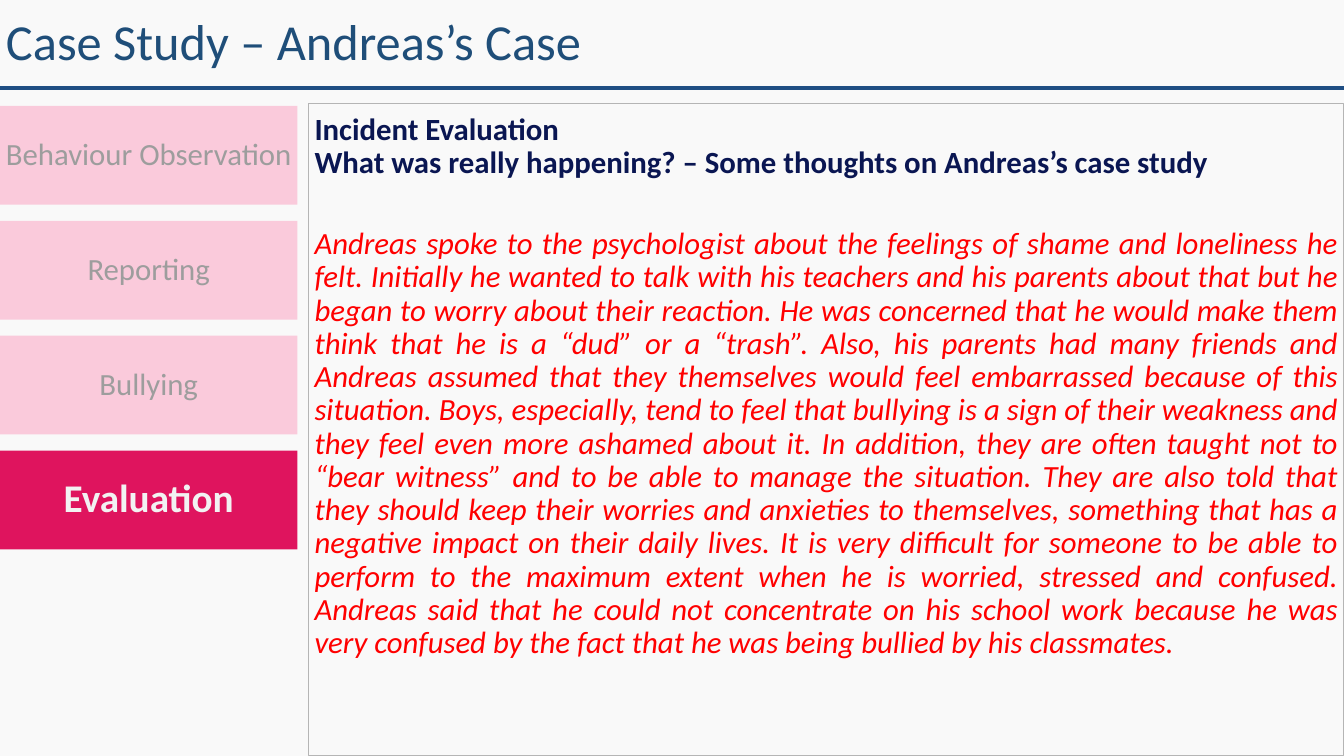
"""Build the case study slide with its stage column and evaluation text."""
from dataclasses import dataclass

from lxml import etree
from pptx import Presentation
from pptx.dml.color import RGBColor
from pptx.enum.shapes import MSO_CONNECTOR, MSO_SHAPE
from pptx.enum.text import MSO_ANCHOR, PP_ALIGN
from pptx.oxml.ns import qn
from pptx.util import Inches, Pt

RECTANGLE = MSO_SHAPE.RECTANGLE
STRAIGHT = MSO_CONNECTOR.STRAIGHT
TOP, MIDDLE = MSO_ANCHOR.TOP, MSO_ANCHOR.MIDDLE
LEFT, CENTER, JUSTIFY = PP_ALIGN.LEFT, PP_ALIGN.CENTER, PP_ALIGN.JUSTIFY


@dataclass(frozen=True)
class Theme:
    """Colours, typeface and type sizes of the slide."""
    font: str = "Calibri"
    background: str = "F9F9F9"
    rule: str = "1F4E83"
    title: str = "1F4E79"
    stage_fill: str = "FACADB"
    stage_text: str = "9D9D9D"
    active_fill: str = "DF145E"
    active_text: str = "F2F2F2"
    border: str = "B5B5B5"
    heading: str = "0A1652"
    story: str = "FF0000"
    title_size: int = 36
    active_size: int = 28
    body_size: int = 22


THEME = Theme()
WIDTH, HEIGHT = 13.33, 7.5
TITLE_HEIGHT = 0.87
STAGE_TOP, STAGE_WIDTH, STAGE_HEIGHT, STAGE_STEP = 1.05, 2.95, 0.98, 1.14
PANEL_LEFT, PANEL_TOP = 3.06, 1.03

TITLE = "Case Study – Andreas’s Case"
STAGES = ["Behaviour Observation", "Reporting", "Bullying", "Evaluation"]
ACTIVE_STAGE = "Evaluation"
HEADINGS = [
    "Incident Evaluation",
    "What was really happening? – Some thoughts on Andreas’s case study",
]
STORY_SENTENCES = [
    "Andreas spoke to the psychologist about the feelings of shame and loneliness he felt.",
    "Initially he wanted to talk with his teachers and his parents about that but he began "
    "to worry about their reaction.",
    "He was concerned that he would make them think that he is a “dud” or a “trash”.",
    "Also, his parents had many friends and Andreas assumed that they themselves would feel "
    "embarrassed because of this situation.",
    "Boys, especially, tend to feel that bullying is a sign of their weakness and they feel "
    "even more ashamed about it.",
    "In addition, they are often taught not to “bear witness” and to be able to manage the "
    "situation.",
    "They are also told that they should keep their worries and anxieties to themselves, "
    "something that has a negative impact on their daily lives.",
    "It is very difficult for someone to be able to perform to the maximum extent when he is "
    "worried, stressed and confused.",
    "Andreas said that he could not concentrate on his school work because he was very "
    "confused by the fact that he was being bullied by his classmates.",
]


def rgb(code):
    """Turn a hex code into a colour."""
    return RGBColor.from_string(code)


def apply(target, values):
    """Set attributes of an object from a dict."""
    for name, value in values.items():
        setattr(target, name, value)


def set_frame(box, anchor, margin_y=0.06, wrap=True):
    """Set margins, anchor and wrapping of a box's text."""
    apply(box.text_frame, {
        "margin_left": Inches(0.06), "margin_right": Inches(0.06),
        "margin_top": Inches(margin_y), "margin_bottom": Inches(margin_y),
        "vertical_anchor": anchor, "word_wrap": wrap,
    })


def write(para, text, size, color, align=LEFT, before=0, **style):
    """Write one formatted span into a paragraph."""
    apply(para, {"alignment": align, "line_spacing": 0.9, "space_before": Pt(before)})
    span = para.add_run()
    span.text = text
    apply(span.font, {"name": THEME.font, "size": Pt(size), **style})
    span.font.color.rgb = rgb(color)


def add_rectangle(page, left, top, width, height):
    """Add a rectangle without shadow, fill or line."""
    box = page.shapes.add_shape(
        RECTANGLE, Inches(left), Inches(top), Inches(width), Inches(height))
    box.shadow.inherit = False
    box.fill.background()
    box.line.fill.background()
    return box


def add_title(page):
    """Add the slide title and the rule below it."""
    box = page.shapes.add_textbox(0, 0, Inches(WIDTH), Inches(TITLE_HEIGHT))
    set_frame(box, MIDDLE)
    write(box.text_frame.paragraphs[0], TITLE, THEME.title_size, THEME.title)
    y = Inches(TITLE_HEIGHT)
    rule = page.shapes.add_connector(STRAIGHT, 0, y, Inches(WIDTH), y)
    rule.line.color.rgb = rgb(THEME.rule)
    rule.line.width = Pt(3)
    etree.SubElement(rule.element.spPr, qn("a:effectLst"))


def add_stage(page, index, label):
    """Add one stage of the column, highlighted when active."""
    active = label == ACTIVE_STAGE
    box = add_rectangle(
        page, 0, STAGE_TOP + index * STAGE_STEP, STAGE_WIDTH, STAGE_HEIGHT)
    box.fill.solid()
    box.fill.fore_color.rgb = rgb(THEME.active_fill if active else THEME.stage_fill)
    set_frame(box, MIDDLE, wrap=False)
    size = THEME.active_size if active else THEME.body_size
    color = THEME.active_text if active else THEME.stage_text
    write(box.text_frame.paragraphs[0], label, size, color, CENTER, bold=active)


def add_panel(page):
    """Add the bordered panel with headings and story."""
    box = add_rectangle(
        page, PANEL_LEFT, PANEL_TOP, WIDTH - PANEL_LEFT, HEIGHT - PANEL_TOP)
    box.line.color.rgb = rgb(THEME.border)
    box.line.width = Pt(0.75)
    set_frame(box, TOP, margin_y=0.1)
    frame = box.text_frame
    first, second = HEADINGS
    write(frame.paragraphs[0], first, THEME.body_size, THEME.heading, bold=True)
    write(frame.add_paragraph(), second, THEME.body_size, THEME.heading, bold=True)
    write(frame.add_paragraph(), " ".join(STORY_SENTENCES), THEME.body_size, THEME.story,
          JUSTIFY, before=34, italic=True)


def main():
    """Build and save the deck."""
    deck = Presentation()
    apply(deck, {"slide_width": Inches(WIDTH), "slide_height": Inches(HEIGHT)})
    page = deck.slides.add_slide(deck.slide_layouts[6])
    page.background.fill.solid()
    page.background.fill.fore_color.rgb = rgb(THEME.background)
    add_title(page)
    for index, label in enumerate(STAGES):
        add_stage(page, index, label)
    add_panel(page)
    deck.save("out.pptx")


if __name__ == "__main__":
    main()
